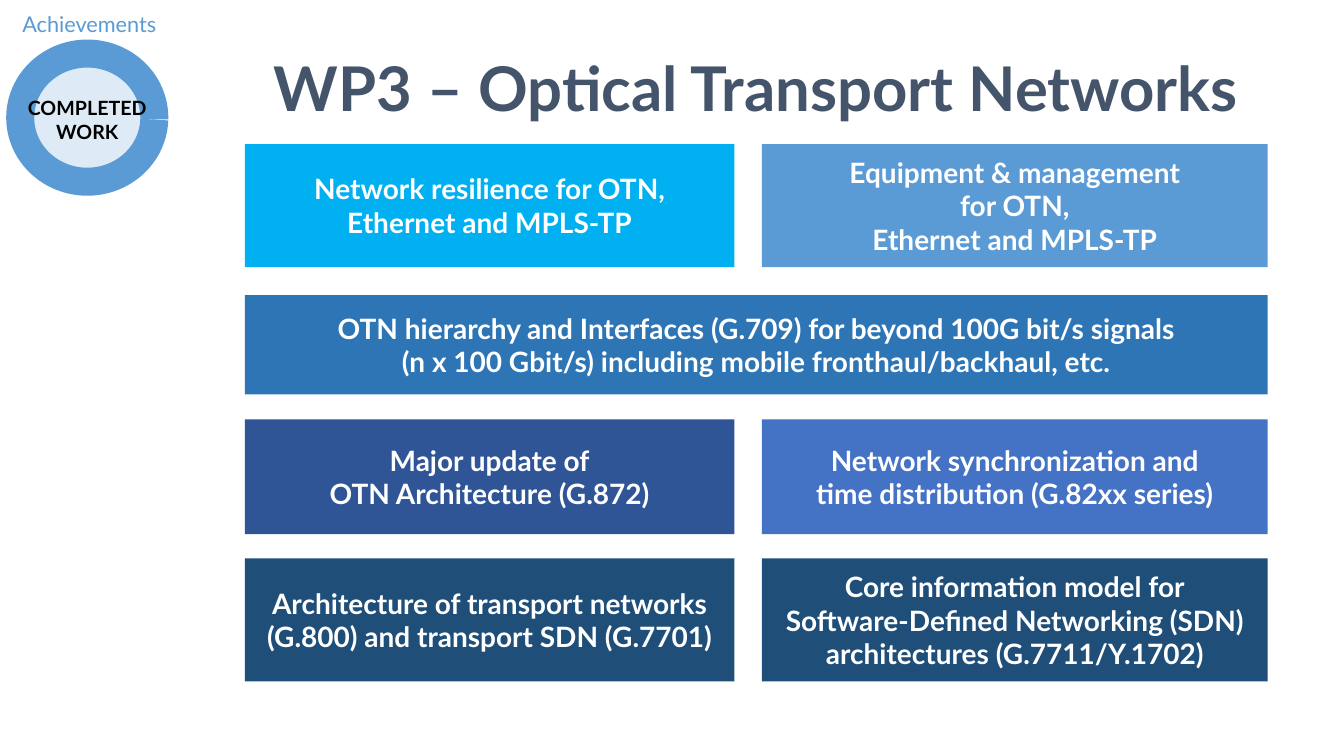
from pptx import Presentation
from pptx.dml.color import RGBColor
from pptx.enum.shapes import MSO_SHAPE as Preset
from pptx.enum.text import MSO_ANCHOR as Anchor, PP_ALIGN as Align
from pptx.util import Cm, Pt

FONT = "Lato"
WHITE = RGBColor(0xFF, 0xFF, 0xFF)
BLACK = RGBColor(0x00, 0x00, 0x00)
SLATE = RGBColor(0x44, 0x54, 0x6A)
GREY = RGBColor(0xF2, 0xF2, 0xF2)
PALE_BLUE = RGBColor(0xDE, 0xEB, 0xF7)
CYAN = RGBColor(0x00, 0xB0, 0xF0)
SKY_BLUE = RGBColor(0x5B, 0x9B, 0xD5)
MID_BLUE = RGBColor(0x2E, 0x75, 0xB6)
INDIGO = RGBColor(0x2F, 0x55, 0x97)
ROYAL_BLUE = RGBColor(0x44, 0x72, 0xC4)
NAVY = RGBColor(0x1F, 0x4E, 0x79)

LEFT = (6.17, 12.34)
RIGHT = (19.2, 12.75)
FULL = (6.17, 25.78)
ROW_1 = (3.63, 3.1)
ROW_2 = (7.44, 2.5)
ROW_3 = (10.57, 2.89)
ROW_4 = (14.07, 3.1)

TOPICS = [
    (FULL, ROW_2, MID_BLUE,
     "OTN hierarchy and Interfaces (G.709) for beyond 100G bit/s signals\n"
     "(n x 100 Gbit/s) including mobile fronthaul/backhaul, etc."),
    (LEFT, ROW_3, INDIGO, "Major update of\nOTN Architecture (G.872)"),
    (RIGHT, ROW_1, SKY_BLUE,
     "Equipment & management\nfor OTN,\nEthernet and MPLS-TP"),
    (RIGHT, ROW_3, ROYAL_BLUE,
     "Network synchronization and\ntime distribution (G.82xx series)"),
    (RIGHT, ROW_4, NAVY,
     "Core information model for\nSoftware-Defined Networking (SDN)\n"
     "architectures (G.7711/Y.1702)"),
    (LEFT, ROW_4, NAVY,
     "Architecture of transport networks\n(G.800) and transport SDN (G.7701)"),
    (LEFT, ROW_1, CYAN, "Network resilience for OTN,\nEthernet and MPLS-TP"),
]


def write_text(shape, text, size, color, bold=True, wrap=True, margins=(0.25, 0.13)):
    text_frame = shape.text_frame
    text_frame.text = text
    text_frame.word_wrap = wrap
    text_frame.margin_left = text_frame.margin_right = Cm(margins[0])
    text_frame.margin_top = text_frame.margin_bottom = Cm(margins[1])
    for paragraph in text_frame.paragraphs:
        paragraph.alignment = Align.CENTER
        for run in paragraph.runs:
            run.font.name = FONT
            run.font.size = Pt(size)
            run.font.bold = bold
            run.font.color.rgb = color


def add_label(slide, left, top, width, height, text, size, color, **style):
    label = slide.shapes.add_textbox(Cm(left), Cm(top), Cm(width), Cm(height))
    write_text(label, text, size, color, **style)
    return label


def add_filled_shape(slide, preset, left, top, width, height, fill):
    shape = slide.shapes.add_shape(preset, Cm(left), Cm(top), Cm(width), Cm(height))
    shape.shadow.inherit = False
    shape.fill.solid()
    shape.fill.fore_color.rgb = fill
    shape.line.fill.background()
    return shape


def add_topic(slide, column, row, fill, text):
    left, width = column
    top, height = row
    box = add_filled_shape(slide, Preset.RECTANGLE, left, top, width, height, fill)
    write_text(box, text, 20, WHITE, wrap=False, margins=(0.18, 0.08))
    box.text_frame.vertical_anchor = Anchor.MIDDLE


def add_progress_ring(slide):
    add_filled_shape(slide, Preset.OVAL, 0.38, 1.24, 3.66, 3.48, GREY)
    ring = add_filled_shape(slide, Preset.ARC, 0.51, 1.35, 3.38, 3.23, PALE_BLUE)
    ring.adjustments[0] = 1
    ring.adjustments[1] = 0.73
    ring.line.color.rgb = SKY_BLUE
    ring.line.width = Pt(20)
    add_label(slide, 0.28, 2.29, 3.84, 1.45, "COMPLETED\nWORK", 14, BLACK)


def main():
    presentation = Presentation()
    presentation.slide_width = Cm(33.87)
    presentation.slide_height = Cm(19.05)
    slide = presentation.slides.add_slide(presentation.slide_layouts[6])

    add_label(slide, 6.12, 1.22, 25.88, 2.01, "WP3 – Optical Transport Networks",
              44, SLATE, wrap=False, margins=(0.13, 0.05))
    section = add_label(slide, 0, 0, 4.5, 1.12, "Achievements", 15.5, SKY_BLUE,
                        bold=False, margins=(0.3, 0.15))
    section.text_frame.paragraphs[0].line_spacing = 1.2
    section.text_frame.paragraphs[0].space_before = Pt(3)
    add_progress_ring(slide)
    for column, row, fill, text in TOPICS:
        add_topic(slide, column, row, fill, text)

    presentation.save("out.pptx")


if __name__ == "__main__":
    main()
